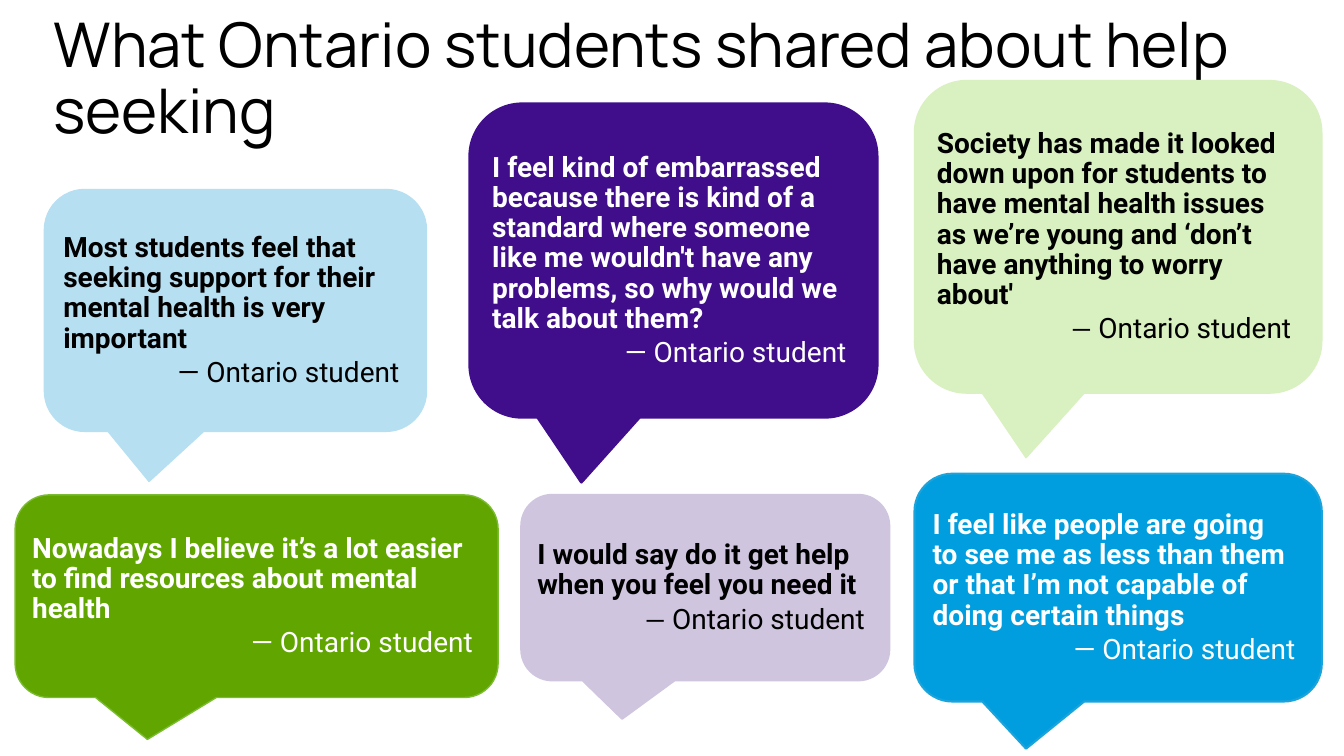
from pptx import Presentation
from pptx.dml.color import RGBColor
from pptx.enum.shapes import MSO_SHAPE
from pptx.enum.text import MSO_ANCHOR, MSO_AUTO_SIZE, PP_ALIGN
from pptx.util import Inches, Pt

BLACK = RGBColor(0x00, 0x00, 0x00)
WHITE = RGBColor(0xFF, 0xFF, 0xFF)
SKY = RGBColor(0xB6, 0xDF, 0xF2)
PURPLE = RGBColor(0x40, 0x0E, 0x8A)
LIME = RGBColor(0xD9, 0xF0, 0xC0)
GREEN = RGBColor(0x60, 0xA5, 0x00)
LEAF = RGBColor(0x7A, 0xBC, 0x30)
LILAC = RGBColor(0xCF, 0xC5, 0xDE)
BLUE = RGBColor(0x00, 0x9E, 0xDE)
AZURE = RGBColor(0x1B, 0xA3, 0xDC)


def write(para, text, font="Roboto", size=20, color=BLACK, bold=False,
          align=PP_ALIGN.LEFT, space=1.0):
    """Add a formatted run to a paragraph."""
    para.alignment = align
    para.line_spacing = space
    run = para.add_run()
    run.text = text
    run.font.name = font
    run.font.size = Pt(size)
    run.font.bold = bold
    run.font.color.rgb = color


class Deck:
    tail = (-0.226, 0.707, 0.167)
    inset = (0.07, 0.04, 0.15, 0.04)

    def __init__(self, file):
        self.slide = file.slides.add_slide(file.slide_layouts[5])

    def title(self, text, box):
        shape = self.slide.shapes.title
        shape.left, shape.top, shape.width, shape.height = map(Inches, box)
        frame = shape.text_frame
        frame.word_wrap = True
        frame.auto_size = MSO_AUTO_SIZE.SHAPE_TO_FIT_TEXT
        write(frame.paragraphs[0], text, font="Manrope", size=44, space=0.9)

    def bubble(self, box, quote, fill, edge, width, color, dash="Roboto"):
        shape = self.slide.shapes.add_shape(
            MSO_SHAPE.ROUNDED_RECTANGULAR_CALLOUT, *map(Inches, box))
        for i, value in enumerate(self.tail):
            shape.adjustments[i] = value
        shape.shadow.inherit = False
        shape.fill.solid()
        shape.fill.fore_color.rgb = fill
        shape.line.color.rgb = edge
        shape.line.width = Pt(width)

        frame = shape.text_frame
        frame.word_wrap = True
        frame.vertical_anchor = MSO_ANCHOR.MIDDLE
        (frame.margin_left, frame.margin_top,
         frame.margin_right, frame.margin_bottom) = map(Inches, self.inset)
        write(frame.paragraphs[0], quote, color=color, bold=True, space=0.9)
        credit = frame.add_paragraph()
        write(credit, "— ", font=dash, color=color, align=PP_ALIGN.RIGHT)
        write(credit, "Ontario student", color=color, align=PP_ALIGN.RIGHT)


def main():
    file = Presentation()
    file.slide_width = Inches(13.33)
    file.slide_height = Inches(7.5)
    deck = Deck(file)

    # Heading
    deck.title("What Ontario students shared about help seeking",
               (0.43, 0.01, 12.83, 1.58))

    # Top row of quotes
    deck.bubble((0.44, 1.88, 3.79, 2.4),
                "Most students feel that seeking support for their mental "
                "health is very important", SKY, SKY, 1, BLACK)
    deck.bubble((4.66, 1.03, 4.04, 3.11),
                "I feel kind of embarrassed because there is kind of a "
                "standard where someone like me wouldn't have any problems, "
                "so why would we talk about them?", PURPLE, PURPLE, 2, WHITE)
    deck.bubble((9.07, 0.8, 4.04, 3.1),
                "Society has made it looked down upon for students to have "
                "mental health issues as we’re young and ‘don’t have "
                "anything to worry about'", LIME, LIME, 1, BLACK, dash="Karla")

    # Bottom row of quotes
    deck.bubble((0.15, 4.91, 4.79, 2.01),
                "Nowadays I believe it’s a lot easier to find resources "
                "about mental health", GREEN, LEAF, 1, WHITE)
    deck.bubble((5.17, 4.91, 3.65, 1.84),
                "I would say do it get help when you feel you need it",
                LILAC, LILAC, 1.5, BLACK, dash="Karla")
    deck.bubble((9.07, 4.7, 4.04, 2.26),
                "I feel like people are going to see me as less than them "
                "or that I’m not capable of doing certain things",
                BLUE, AZURE, 1.5, WHITE)

    file.save("out.pptx")


if __name__ == "__main__":
    main()
